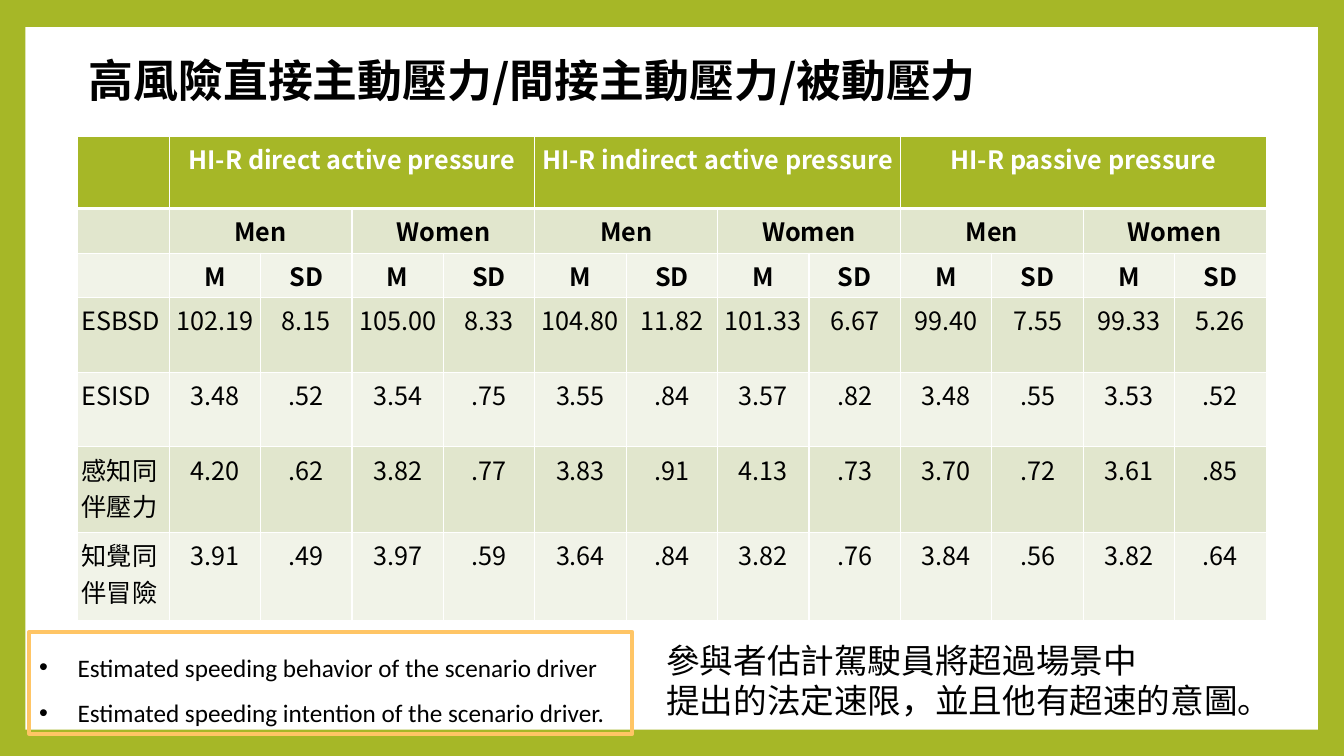
from lxml.etree import SubElement
from pptx import Presentation
from pptx.dml.color import RGBColor
from pptx.enum.shapes import MSO_SHAPE
from pptx.enum.text import MSO_ANCHOR, MSO_AUTO_SIZE, PP_ALIGN
from pptx.oxml.ns import qn
from pptx.util import Inches, Pt

GREEN = RGBColor(0xA6, 0xB7, 0x27)
BAND_DARK = RGBColor(0xE1, 0xE6, 0xCD)
BAND_LIGHT = RGBColor(0xF1, 0xF3, 0xE8)
ORANGE = RGBColor(0xFF, 0xC5, 0x65)
WHITE = RGBColor(0xFF, 0xFF, 0xFF)
BLACK = RGBColor(0, 0, 0)

PRESSURES = ["HI-R direct active pressure", "HI-R indirect active pressure", "HI-R passive pressure"]
MEASURES = [
    ["ESBSD", "102.19", "8.15", "105.00", "8.33", "104.80", "11.82",
     "101.33", "6.67", "99.40", "7.55", "99.33", "5.26"],
    ["ESISD", "3.48", ".52", "3.54", ".75", "3.55", ".84",
     "3.57", ".82", "3.48", ".55", "3.53", ".52"],
    ["感知同伴壓力", "4.20", ".62", "3.82", ".77", "3.83", ".91",
     "4.13", ".73", "3.70", ".72", "3.61", ".85"],
    ["知覺同伴冒險", "3.91", ".49", "3.97", ".59", "3.64", ".84",
     "3.82", ".76", "3.84", ".56", "3.82", ".64"],
]
ROW_SHARES = [9.6, 5.87, 5.87, 9.87, 9.87, 11.33, 11.6]
HEADING_ROWS = 3


class PressureSlide:
    cjk_font = "Noto Sans CJK SC"
    latin_font = "Calibri"

    def __init__(self, deck):
        self.width, self.height = deck.slide_width, deck.slide_height
        self.page = deck.slides.add_slide(deck.slide_layouts[5])
        self.page.background.fill.solid()
        self.page.background.fill.fore_color.rgb = GREEN

    def across(self, share):
        return round(self.width * share / 100)

    def down(self, share):
        return round(self.height * share / 100)

    def area(self, left, top, width, height):
        return self.across(left), self.down(top), self.across(width), self.down(height)

    def set_text(self, frame, lines, size, font=cjk_font, color=BLACK, bold=False, align=PP_ALIGN.LEFT):
        frame.text = "\n".join(lines)
        for para in frame.paragraphs:
            para.alignment = align
            for span in para.runs:
                span.font.size = Pt(size)
                span.font.bold = bold
                span.font.color.rgb = color
                span.font.name = font
                SubElement(span._r.get_or_add_rPr(), qn("a:ea"), typeface=font)

    def title(self, text, *shares):
        title = self.page.shapes.title
        title.left, title.top, title.width, title.height = self.area(*shares)
        frame = title.text_frame
        frame.word_wrap = True
        frame.auto_size = MSO_AUTO_SIZE.NONE
        frame.vertical_anchor = MSO_ANCHOR.MIDDLE
        self.set_text(frame, [text], 32, bold=True)

    def rectangle(self, *shares):
        box = self.page.shapes.add_shape(MSO_SHAPE.RECTANGLE, *self.area(*shares))
        box.shadow.inherit = False
        return box

    def panel(self, *shares):
        box = self.rectangle(*shares)
        box.fill.solid()
        box.fill.fore_color.rgb = WHITE
        box.line.fill.background()
        self.page.shapes.title.element.addprevious(box.element)

    def bullet_box(self, lines, *shares):
        box = self.rectangle(*shares)
        box.fill.background()
        box.line.color.rgb = ORANGE
        box.line.width = Pt(3)
        frame = box.text_frame
        frame.word_wrap = True
        frame.vertical_anchor = MSO_ANCHOR.TOP
        self.set_text(frame, lines, 18, self.latin_font)
        indent = Inches(0.38)
        for para in frame.paragraphs:
            para.line_spacing = 1.5
            properties = para._p.get_or_add_pPr()
            properties.set("marL", str(indent))
            properties.set("indent", str(-indent))
            SubElement(properties, qn("a:buFont"), typeface="Arial")
            SubElement(properties, qn("a:buChar"), char="•")

    def note(self, lines, *shares):
        box = self.page.shapes.add_textbox(*self.area(*shares))
        box.text_frame.word_wrap = True
        self.set_text(box.text_frame, lines, 24)

    def borders(self, cell, row):
        widths = {"L": 1, "R": 1, "T": 3 if row == 1 else 1, "B": 3 if row == 0 else 1}
        for side, width in widths.items():
            line = SubElement(cell._tc.get_or_add_tcPr(), qn(f"a:ln{side}"), w=str(Pt(width)))
            fill = SubElement(line, qn("a:solidFill"))
            SubElement(fill, qn("a:srgbClr"), val=str(WHITE))

    def cell(self, cell, text, row, column):
        cell.margin_left = cell.margin_right = Inches(0.04)
        cell.margin_top = cell.margin_bottom = Inches(0.04)
        self.borders(cell, row)
        cell.fill.solid()
        cell.fill.fore_color.rgb = GREEN if row == 0 else BAND_DARK if row % 2 else BAND_LIGHT
        if text:
            self.set_text(cell.text_frame, [text], 18,
                          color=WHITE if row == 0 else BLACK,
                          bold=row < HEADING_ROWS,
                          align=PP_ALIGN.CENTER if column else PP_ALIGN.LEFT)

    def table(self, rows, spans, row_shares, left, top, width):
        area = self.area(left, top, width, sum(row_shares))
        table = self.page.shapes.add_table(len(rows), len(rows[0]), *area).table
        for column in table.columns:
            column.width = self.across(width / len(rows[0]))
        for row, share in zip(table.rows, row_shares):
            row.height = self.down(share)
        for row, texts in enumerate(rows):
            for column, text in enumerate(texts):
                self.cell(table.cell(row, column), text, row, column)
        for row, span in enumerate(spans):
            for column in range(1, len(rows[0]), span):
                table.cell(row, column).merge(table.cell(row, column + span - 1))


def main():
    deck = Presentation()
    deck.slide_width, deck.slide_height = Inches(13.33), Inches(7.5)
    slide = PressureSlide(deck)
    slide.title("高風險直接主動壓力/間接主動壓力/被動壓力", 5.85, 5.87, 72.09, 9.33)
    slide.panel(1.88, 3.6, 96.17, 92.93)
    pressure_row = [""]
    for pressure in PRESSURES:
        pressure_row += [pressure, "", "", ""]
    headings = [pressure_row, [""] + ["Men", "", "Women", ""] * 3, [""] + ["M", "SD"] * 6]
    slide.table(headings + MEASURES, [4, 2], ROW_SHARES, 5.78, 18, 88.45)
    slide.bullet_box(["Estimated speeding behavior of the scenario driver",
                      "Estimated speeding intention of the scenario driver."],
                     2.18, 83.6, 44.86, 13.47)
    slide.note(["參與者估計駕駛員將超過場景中", "提出的法定速限，並且他有超速的意圖。"],
               48.84, 84, 50.04, 12.13)
    deck.save("out.pptx")


if __name__ == "__main__":
    main()
